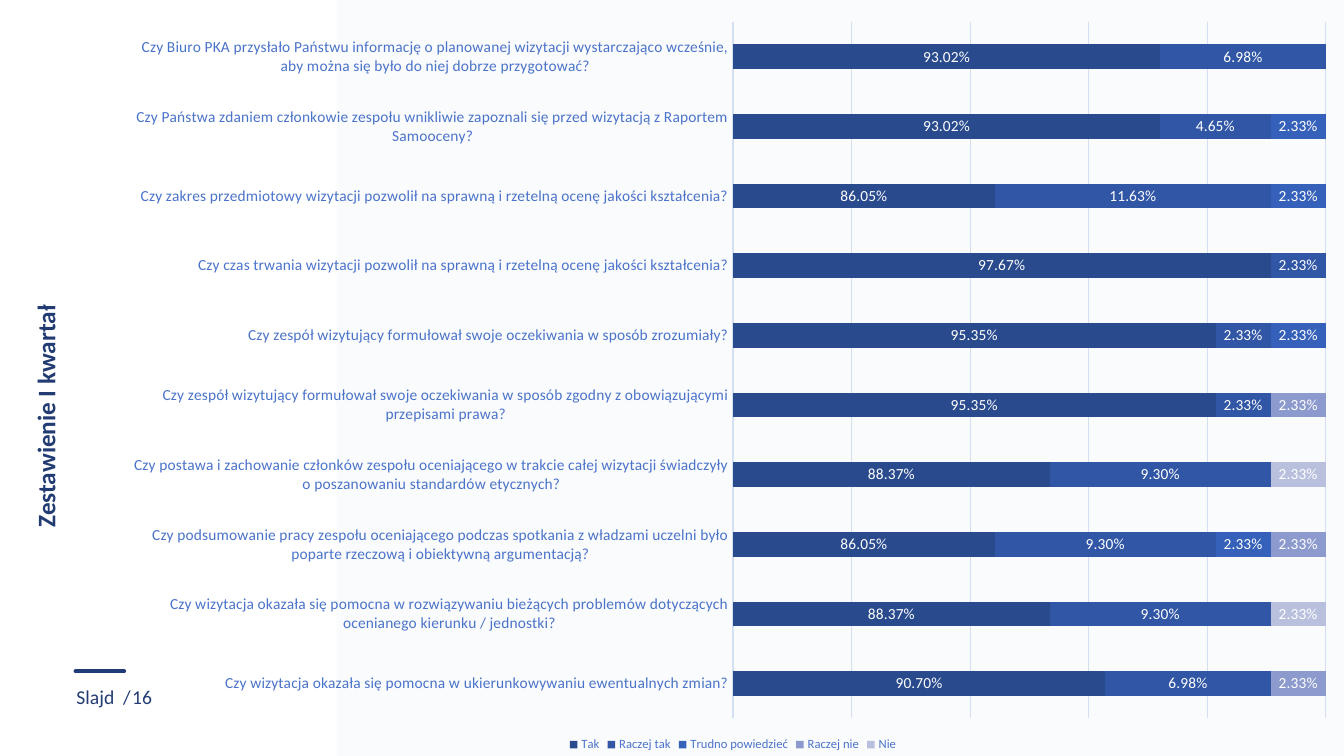
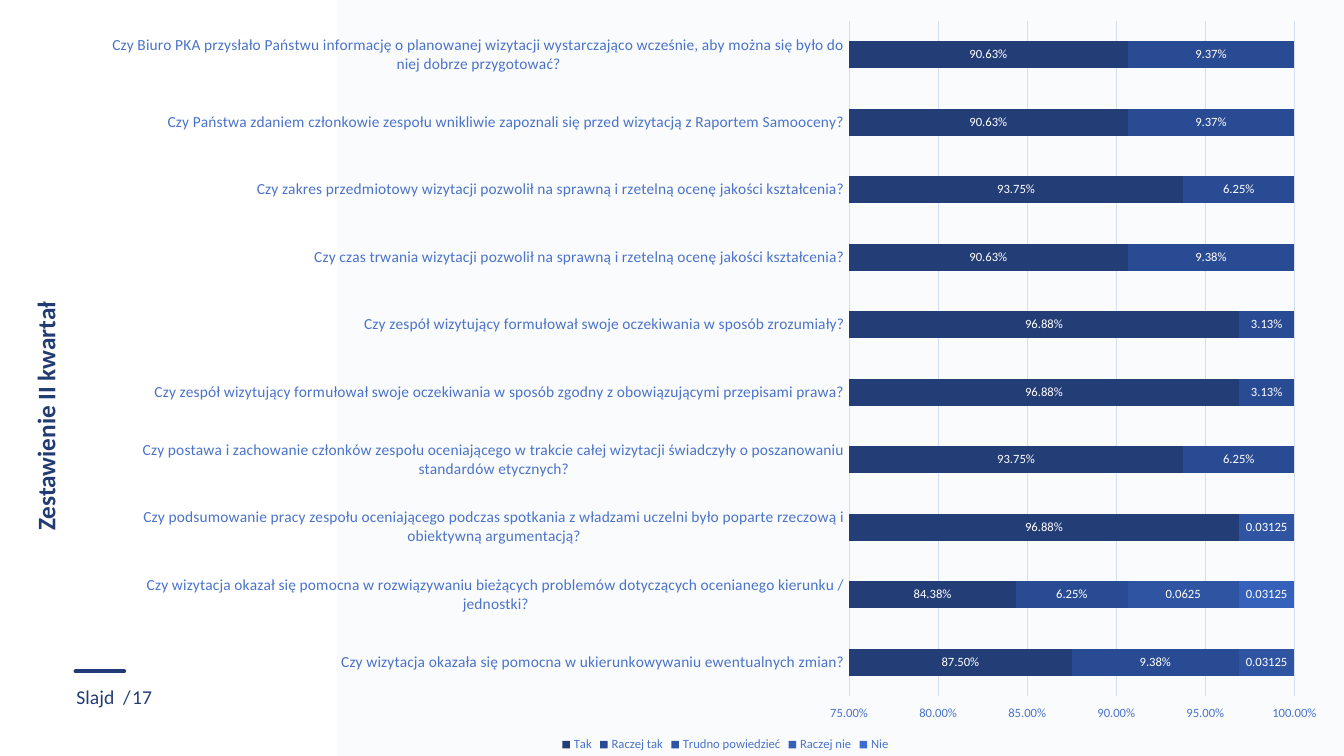
from lxml import etree
from pptx import Presentation
from pptx import util as u
from pptx.chart import data as chart_data
from pptx.dml import color
from pptx.enum import chart as chart_enum, shapes, text
from pptx.oxml import ns

FONT = "Calibri"
COLORS = {
    "navy": "223C73",
    "rule": "213B78",
    "label": "4A73C9",
    "grid": "D5DFF3",
    "white": "FFFFFF",
}
ANSWERS = ["Tak", "Raczej tak", "Trudno powiedzieć", "Raczej nie", "Nie"]
QUESTIONS = [
    "Czy Biuro PKA przysłało Państwu informację o planowanej wizytacji wystarczająco wcześnie, aby można się było do niej dobrze przygotować?",
    "Czy Państwa zdaniem członkowie zespołu wnikliwie zapoznali się przed wizytacją z Raportem Samooceny?",
    "Czy zakres przedmiotowy wizytacji pozwolił na sprawną i rzetelną ocenę jakości kształcenia?",
    "Czy czas trwania wizytacji pozwolił na sprawną i rzetelną ocenę jakości kształcenia?",
    "Czy zespół wizytujący formułował swoje oczekiwania w sposób zrozumiały?",
    "Czy zespół wizytujący formułował swoje oczekiwania w sposób zgodny z obowiązującymi przepisami prawa?",
    "Czy postawa i zachowanie członków zespołu oceniającego w trakcie całej wizytacji świadczyły o poszanowaniu standardów etycznych?",
    "Czy podsumowanie pracy zespołu oceniającego podczas spotkania z władzami uczelni było poparte rzeczową i obiektywną argumentacją?",
    "Czy wizytacja okazała się pomocna w rozwiązywaniu bieżących problemów dotyczących ocenianego kierunku / jednostki?",
    "Czy wizytacja okazała się pomocna w ukierunkowywaniu ewentualnych zmian?",
]
PERCENT = "0.00%;;"
GENERAL = "General"

QUARTERS = [
    {
        "title": "Zestawienie I kwartał",
        "number": "16",
        "questions": QUESTIONS,
        "values": [
            [0.9302, 0.9302, 0.8605, 0.9767, 0.9535, 0.9535, 0.8837, 0.8605, 0.8837, 0.907],
            [0.0698, 0.0465, 0.1163, 0.0233, 0.0233, 0.0233, 0.093, 0.093, 0.093, 0.0698],
            [0, 0.0233, 0.0233, 0, 0.0233, 0, 0, 0.0233, 0, 0],
            [0, 0, 0, 0, 0, 0.0233, 0, 0.0233, 0, 0.0233],
            [0, 0, 0, 0, 0, 0, 0.0233, 0, 0.0233, 0],
        ],
        "fills": ["294A8D", "3056A5", "3661BA", "8C9ACD", "B9C0DD"],
        "formats": [PERCENT] * 5,
        "place": (1.27, 0.07, 12, 7.43),
        "plot": (0.5, 0.02, 0.49, 0.93),
        "gap": 182,
        "label_size": 11,
        "show_scale": False,
    },
    {
        "title": "Zestawienie II kwartał",
        "number": "17",
        "questions": [question.replace("okazała się pomocna w rozwiązywaniu",
                                       "okazał się pomocna w rozwiązywaniu")
                      for question in QUESTIONS],
        "values": [
            [0.9063, 0.9063, 0.9375, 0.9063, 0.9688, 0.9688, 0.9375, 0.9688, 0.8438, 0.875],
            [0.0937, 0.0937, 0.0625, 0.0938, 0.0313, 0.0313, 0.0625, 0, 0.0625, 0.0938],
            [None] * 7 + [0.03125, 0.0625, 0.03125],
            [None] * 8 + [0.03125, None],
            [None] * 10,
        ],
        "fills": ["233D76", "294B93", "2F54A1", "3661BA", "3D6ECF"],
        "formats": [PERCENT, PERCENT, GENERAL, GENERAL, GENERAL],
        "place": (1.06, 0.06, 12.27, 7.44),
        "plot": (0.6, 0.02, 0.36, 0.9),
        "gap": 150,
        "label_size": 9,
        "show_scale": True,
    },
]


def rgb(name):
    return color.RGBColor.from_string(COLORS.get(name, name))


def inches(*lengths):
    return [u.Inches(length) for length in lengths]


def style_font(font, size, color_name, bold=False):
    font.name = FONT
    font.size = u.Pt(size)
    font.bold = bold
    font.color.rgb = rgb(color_name)


def style_line(line, color_name, width):
    line.color.rgb = rgb(color_name)
    line.width = u.Pt(width)


def add_label(slide, place, words):
    label = slide.shapes.add_textbox(*inches(*place))
    frame = label.text_frame
    frame.word_wrap = False
    frame.text = words
    style_font(frame.paragraphs[0].runs[0].font, 14, "navy")
    return frame


def add_frame(slide, number):
    panel = slide.shapes.add_shape(shapes.MSO_SHAPE.RECTANGLE, *inches(3.34, 0, 9.99, 7.5))
    panel.shadow.inherit = False
    panel.fill.solid()
    panel.fill.fore_color.rgb = rgb("navy")
    panel.line.fill.background()
    tint = panel.element.spPr.find(".//" + ns.qn("a:srgbClr"))
    etree.SubElement(tint, ns.qn("a:alpha")).set("val", "2000")

    number_frame = add_label(slide, (1.18, 6.73, 0.71, 0.36), number)
    number_frame.vertical_anchor = text.MSO_ANCHOR.MIDDLE
    number_frame.word_wrap = True
    number_frame.margin_left = number_frame.margin_right = u.Inches(0.13)
    number_frame.margin_top = number_frame.margin_bottom = u.Inches(0.07)
    add_label(slide, (0.66, 6.75, 0.75, 0.34), "Slajd  /")

    rule = slide.shapes.add_connector(shapes.MSO_CONNECTOR.STRAIGHT,
                                      *inches(0.75, 6.66, 1.23, 6.66))
    style_line(rule.line, "rule", 3)
    rule.element.spPr.find(ns.qn("a:ln")).set("cap", "rnd")
    etree.SubElement(rule.element.spPr, ns.qn("a:effectLst"))


def set_title(slide, words):
    title = slide.shapes.title
    title.left, title.top, title.width, title.height = inches(-1.27, 3.88, 3.54, 0.5)
    title.rotation = 270
    frame = title.text_frame
    frame.text = words
    frame.auto_size = text.MSO_AUTO_SIZE.NONE
    frame.vertical_anchor = text.MSO_ANCHOR.TOP
    paragraph = frame.paragraphs[0]
    paragraph.alignment = text.PP_ALIGN.CENTER
    style_font(paragraph.runs[0].font, 18, "navy", bold=True)


def set_plot_area(chart, plot_box):
    plot_area = chart.element.find(".//" + ns.qn("c:plotArea"))
    for layout in plot_area.findall(ns.qn("c:layout")):
        plot_area.remove(layout)
    layout = etree.Element(ns.qn("c:layout"))
    manual = etree.SubElement(layout, ns.qn("c:manualLayout"))
    settings = [("layoutTarget", "inner"), ("xMode", "edge"), ("yMode", "edge")]
    settings += zip("xywh", plot_box)
    for tag, value in settings:
        etree.SubElement(manual, ns.qn("c:" + tag)).set("val", str(value))
    plot_area.insert(0, layout)


def style_axes(chart, show_scale):
    questions_axis = chart.category_axis
    questions_axis.reverse_order = True
    style_font(questions_axis.tick_labels.font, 11, "label")
    style_line(questions_axis.format.line, "grid", 0.75)

    scale = chart.value_axis
    scale.minimum_scale, scale.maximum_scale, scale.major_unit = 0.75, 1, 0.05
    scale.has_major_gridlines = True
    style_line(scale.major_gridlines.format.line, "grid", 0.75)
    scale.tick_label_position = chart_enum.XL_TICK_LABEL_POSITION.HIGH
    scale.tick_labels.number_format = "0.00%"
    scale.tick_labels.number_format_is_linked = False
    style_font(scale.tick_labels.font, 9, "label")
    scale.format.line.fill.background()
    scale.visible = show_scale

    for axis in (questions_axis, scale):
        axis.major_tick_mark = axis.minor_tick_mark = chart_enum.XL_TICK_MARK.NONE


def add_answers_chart(slide, quarter):
    answers = chart_data.CategoryChartData(number_format="0.00%")
    answers.categories = quarter["questions"]
    for answer, values in zip(ANSWERS, quarter["values"]):
        answers.add_series(answer, values)
    chart = slide.shapes.add_chart(chart_enum.XL_CHART_TYPE.BAR_STACKED,
                                   *inches(*quarter["place"]), answers).chart
    style_font(chart.font, 10, "navy")
    chart.has_title = False
    chart.has_legend = True
    chart.legend.position = chart_enum.XL_LEGEND_POSITION.BOTTOM
    chart.legend.include_in_layout = False
    style_font(chart.legend.font, 9, "label")

    plot = chart.plots[0]
    plot.gap_width = quarter["gap"]
    plot.overlap = 100
    plot.vary_by_categories = False
    for series, fill, number_format in zip(plot.series, quarter["fills"], quarter["formats"]):
        series.invert_if_negative = False
        series.format.fill.solid()
        series.format.fill.fore_color.rgb = rgb(fill)
        labels = series.data_labels
        labels.show_value = True
        labels.position = chart_enum.XL_LABEL_POSITION.CENTER
        labels.number_format = number_format
        labels.number_format_is_linked = False
        style_font(labels.font, quarter["label_size"], "white")

    style_axes(chart, quarter["show_scale"])
    set_plot_area(chart, quarter["plot"])


def main():
    presentation = Presentation()
    presentation.slide_width, presentation.slide_height = inches(13.33, 7.5)
    for quarter in QUARTERS:
        slide = presentation.slides.add_slide(presentation.slide_layouts[5])
        add_frame(slide, quarter["number"])
        set_title(slide, quarter["title"])
        add_answers_chart(slide, quarter)
    presentation.save("out.pptx")


if __name__ == "__main__":
    main()
